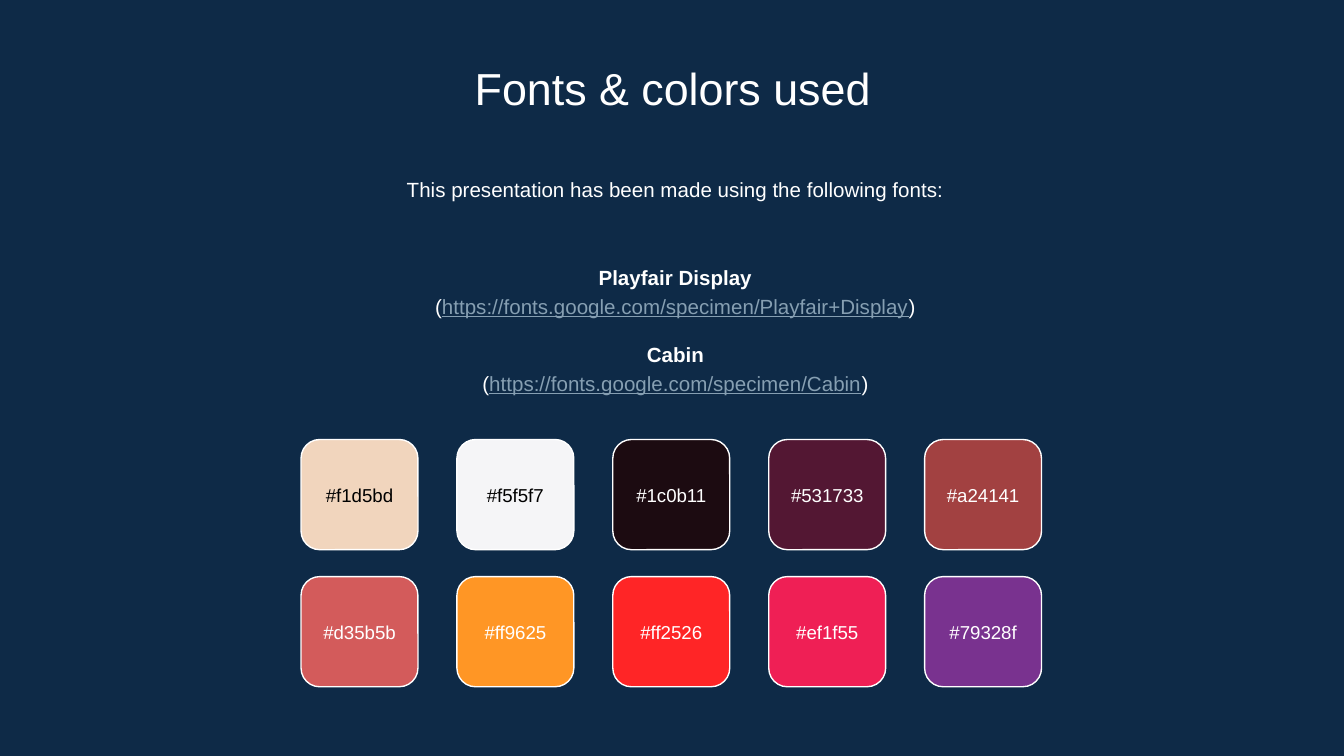
from pptx import Presentation
from pptx.dml.color import RGBColor
from pptx.enum.shapes import MSO_SHAPE
from pptx.enum.text import MSO_ANCHOR, PP_ALIGN
from pptx.util import Inches, Pt

CENTER = PP_ALIGN.CENTER
TOP, MIDDLE = MSO_ANCHOR.TOP, MSO_ANCHOR.MIDDLE
ROUNDED = MSO_SHAPE.ROUNDED_RECTANGLE
WHITE, BLACK, NAVY, LINK = "FFFFFF", "000000", "0E2A47", "869FB2"


def color(value):
    return RGBColor.from_string(value.upper())


def format_text(shape, size, text_color, anchor, spacing=1.0):
    frame = shape.text_frame
    frame.word_wrap = True
    frame.vertical_anchor = anchor
    frame.margin_left = frame.margin_right = Inches(0.1)
    frame.margin_top = frame.margin_bottom = Inches(0.1)
    for para in frame.paragraphs:
        para.alignment = CENTER
        para.line_spacing = spacing
        for span in para.runs:
            span.font.name = "Arial"
            span.font.size = Pt(size)
            span.font.color.rgb = color(text_color)


deck = Presentation()
deck.slide_width, deck.slide_height = Inches(10), Inches(10 * 9 / 16)
page = deck.slides.add_slide(deck.slide_layouts[5])
page.background.fill.solid()
page.background.fill.fore_color.rgb = color(NAVY)

title = page.shapes.title
title.left, title.top = Inches(1.15), Inches(0.35)
title.width, title.height = Inches(7.71), Inches(0.53)
title.text_frame.text = "Fonts & colors used"
format_text(title, 24, WHITE, TOP)

intro = page.shapes.add_textbox(Inches(1.17), Inches(1.19), Inches(7.71), Inches(0.48))
intro.text_frame.text = "This presentation has been made using the following fonts:"
format_text(intro, 11, WHITE, TOP, 1.15)

fonts_used = [
    ("Playfair Display", "https://fonts.google.com/specimen/Playfair+Display"),
    ("Cabin", "https://fonts.google.com/specimen/Cabin"),
]
font_list = page.shapes.add_textbox(Inches(1.17), Inches(1.76), Inches(7.71), Inches(1.37))
font_list.text_frame.text = "\n".join(f"{name}\n(" for name, address in fonts_used)
paragraphs = font_list.text_frame.paragraphs
name_paragraphs, address_paragraphs = paragraphs[0::2], paragraphs[1::2]
for para, (name, address) in zip(address_paragraphs, fonts_used):
    para.add_run().text = address
    para.add_run().text = ")"
format_text(font_list, 11, WHITE, MIDDLE, 1.15)
for para in name_paragraphs:
    para.runs[0].font.bold = True
for para in name_paragraphs[1:]:
    para.space_before = Pt(11)
for para in address_paragraphs:
    link = para.runs[1]
    link.font.underline = True
    link.font.color.rgb = color(LINK)

palette = [
    ["f1d5bd", "f5f5f7", "1c0b11", "531733", "a24141"],
    ["d35b5b", "ff9625", "ff2526", "ef1f55", "79328f"],
]
light_swatches = {"f1d5bd", "f5f5f7"}
for row, swatches in enumerate(palette):
    for column, value in enumerate(swatches):
        swatch = page.shapes.add_shape(
            ROUNDED,
            Inches(2.24 + 1.16 * column),
            Inches(3.27 + 1.02 * row),
            Inches(0.87),
            Inches(0.82),
        )
        swatch.adjustments[0] = 0.17
        swatch.shadow.inherit = False
        swatch.fill.solid()
        swatch.fill.fore_color.rgb = color(value)
        swatch.line.color.rgb = color(WHITE)
        swatch.line.width = Pt(0.75)
        swatch.text_frame.text = f"#{value}"
        format_text(swatch, 10, BLACK if value in light_swatches else WHITE, MIDDLE)

deck.save("out.pptx")
